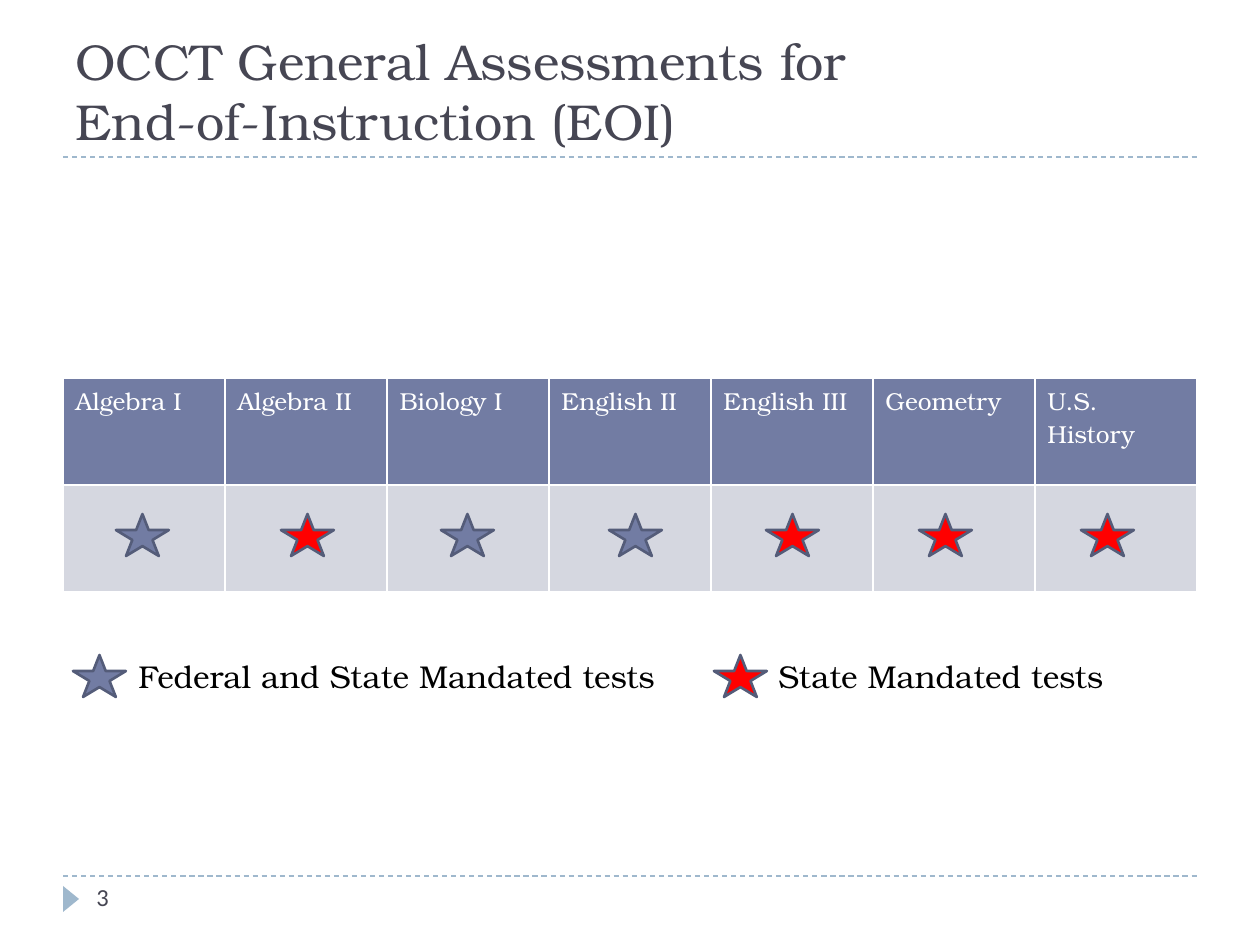
import pptx
import pptx.util
import pptx.dml.color
import pptx.enum.dml
import pptx.enum.shapes
import pptx.enum.text
import pptx.oxml
import lxml.etree

PX = 914400 / 126
SERIF = "TeX Gyre Bonum"
SLATE, RED, WHITE, MIST = "727CA3", "FF0000", "FFFFFF", "D5D7E0"
INK, SKY, OUTLINE = "464653", "9FB8CD", "545C79"
DRAWING = "http://schemas.openxmlformats.org/drawingml/2006/main"


def px(*lengths):
    return [round(length * PX) for length in lengths]


def color(value):
    return pptx.dml.color.RGBColor.from_string(value)


deck = pptx.Presentation()
deck.slide_width, deck.slide_height = px(1260, 945)
slide = deck.slides.add_slide(deck.slide_layouts[5])
shapes = slide.shapes

for rule_y in (876, 157):
    rule = shapes.add_connector(
        pptx.enum.shapes.MSO_CONNECTOR.STRAIGHT, *px(63, rule_y, 1197, rule_y))
    rule.line.color.rgb = color(SKY)
    rule.line.width = pptx.util.Pt(0.75)
    rule.line.dash_style = pptx.enum.dml.MSO_LINE.DASH
    lxml.etree.SubElement(rule._element.spPr, f"{{{DRAWING}}}effectLst")

page_marker = shapes.add_shape(
    pptx.enum.shapes.MSO_SHAPE.ISOSCELES_TRIANGLE, *px(58, 891, 26, 16))
page_marker.rotation = 90
page_marker.shadow.inherit = False
page_marker.fill.solid()
page_marker.fill.fore_color.rgb = color(SKY)
page_marker.line.fill.background()

title = shapes.title
title.left, title.top, title.width, title.height = px(63, 21, 1134, 136)
title.text_frame.text = "OCCT General Assessments for \vEnd-of-Instruction (EOI)"
title.text_frame.auto_size = pptx.enum.text.MSO_AUTO_SIZE.NONE
title.text_frame.vertical_anchor = pptx.enum.text.MSO_ANCHOR.BOTTOM
heading = title.text_frame.paragraphs[0]
heading.alignment = pptx.enum.text.PP_ALIGN.LEFT
heading.font.name = SERIF
heading.font.size = pptx.util.Pt(28.8)
heading.font.color.rgb = color(INK)

subjects = [
    ("Algebra I", 116, SLATE),
    ("Algebra II", 281, RED),
    ("Biology I", 441, SLATE),
    ("English II", 609, SLATE),
    ("English III", 766, RED),
    ("Geometry", 919, RED),
    ("U.S. History", 1081, RED),
]
subject_table = shapes.add_table(
    2, len(subjects), *px(63, 378, 1134, 214)).table
for column, (subject, star_x, star_fill) in enumerate(subjects):
    header = subject_table.cell(0, column)
    header.text = subject
    label = header.text_frame.paragraphs[0]
    label.font.name = SERIF
    label.font.size = pptx.util.Pt(14)
    label.font.bold = False
    label.font.color.rgb = color(WHITE)
    for cell, cell_fill in ((header, SLATE), (subject_table.cell(1, column), MIST)):
        properties = cell._tc.get_or_add_tcPr()
        for side in ("lnL", "lnR", "lnT", "lnB"):
            properties.append(pptx.oxml.parse_xml(
                f'<a:{side} xmlns:a="{DRAWING}" w="12700"><a:solidFill>'
                f'<a:srgbClr val="{WHITE}"/></a:solidFill></a:{side}>'))
        cell.fill.solid()
        cell.fill.fore_color.rgb = color(cell_fill)

captions = [
    ("Federal and State Mandated tests", 126, 651, 557, SERIF, 18, "000000"),
    ("State Mandated tests", 766, 651, 410, SERIF, 18, "000000"),
    ("3", 84, 876, 273, "Calibri", 14, INK),
]
for wording, left, top, width, typeface, size, ink in captions:
    caption = shapes.add_textbox(*px(left, top, width, 50)).text_frame
    caption.word_wrap = True
    caption.text = wording
    line = caption.paragraphs[0]
    line.font.name = typeface
    line.font.size = pptx.util.Pt(size)
    line.font.color.rgb = color(ink)

stars = [(star_x, 514, star_fill) for _, star_x, star_fill in subjects]
stars += [(73, 655, SLATE), (714, 655, RED)]
for left, top, star_fill in stars:
    star = shapes.add_shape(
        pptx.enum.shapes.MSO_SHAPE.STAR_5_POINT, *px(left, top, 53, 42))
    star.shadow.inherit = False
    star.fill.solid()
    star.fill.fore_color.rgb = color(star_fill)
    star.line.color.rgb = color(OUTLINE)
    star.line.width = pptx.util.Pt(1.5)

deck.save("out.pptx")
